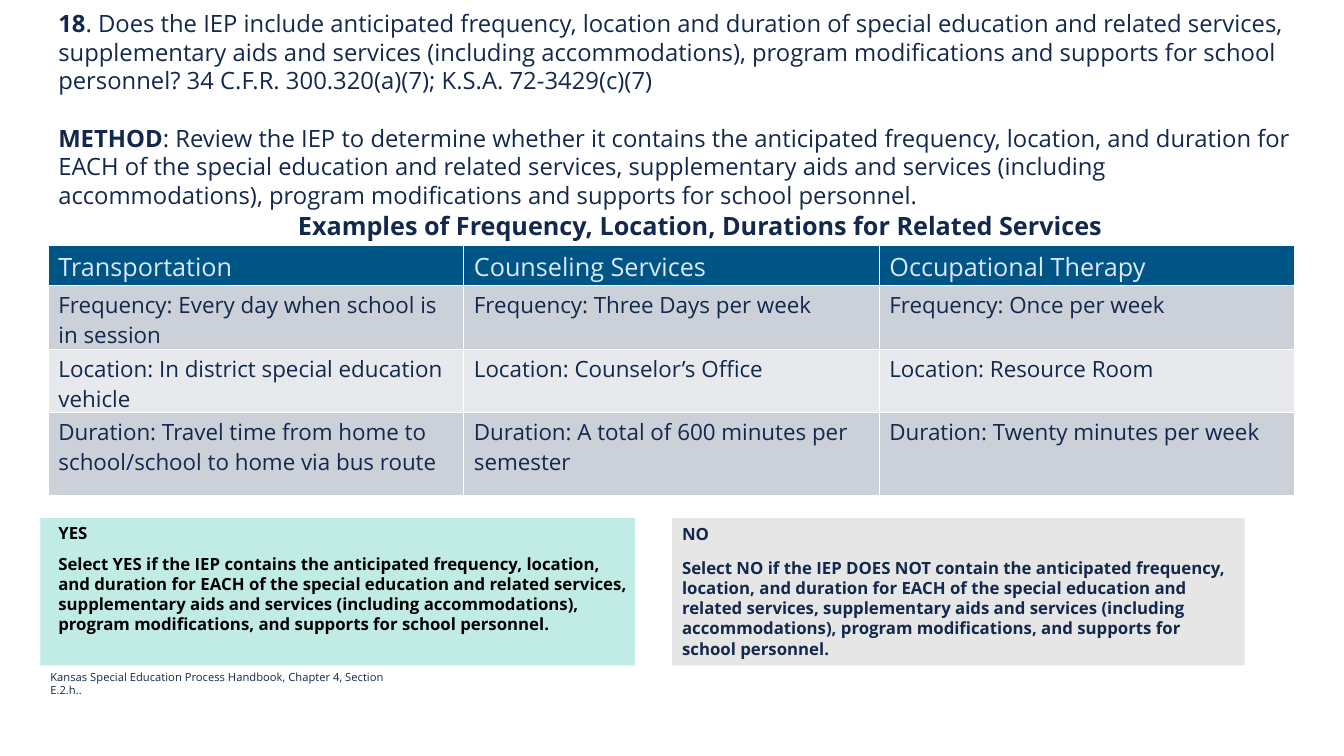
from lxml import etree
from pptx import Presentation
from pptx import util as u
from pptx.dml.color import RGBColor
from pptx.enum import shapes, text
from pptx.oxml.ns import qn

FONT = "Open Sans"
NAVY = "12284C"
ROWS = [
    ("Transportation", "Counseling Services", "Occupational Therapy"),
    ("Frequency: Every day when school is in session",
     "Frequency: Three Days per week", "Frequency: Once per week"),
    ("Location: In district special education vehicle",
     "Location: Counselor’s Office", "Location: Resource Room"),
    ("Duration: Travel time from home to school/school to home via bus route",
     "Duration: A total of 600 minutes per semester",
     "Duration: Twenty minutes per week"),
]
QUESTION = [
    [("18", True),
     (". Does the IEP include anticipated frequency, location and duration of special "
      "education and related services, supplementary aids and services (including "
      "accommodations), program modifications and supports for school personnel? "
      "34 C.F.R. 300.320(a)(7); K.S.A. 72-3429(c)(7)", False)],
    [("METHOD", True),
     (": Review the IEP to determine whether it contains the anticipated frequency, "
      "location, and duration for EACH of the special education and related services, "
      "supplementary aids and services (including accommodations), program "
      "modifications and supports for school personnel.", False)],
]
SERVICES = (" the anticipated frequency, location, and duration for EACH of the special "
            "education and related services, supplementary aids and services (including "
            "accommodations), program modifications, and supports for school personnel.")


def paint(target, color):
    target.fill.solid()
    target.fill.fore_color.rgb = RGBColor.from_string(color)


def apply(target, values):
    for name, value in values.items():
        setattr(target, name, value)


def write(frame, paragraphs, size, color=NAVY, gap=0, indent=0):
    apply(frame, {"word_wrap": True, "vertical_anchor": text.MSO_ANCHOR.TOP})
    for index, spans in enumerate(paragraphs):
        para = frame.paragraphs[0] if index == 0 else frame.add_paragraph()
        apply(para, {"alignment": text.PP_ALIGN.LEFT, "line_spacing": 1.0})
        if index:
            para.space_before = u.Pt(gap)
        if indent:
            para._p.get_or_add_pPr().set("marL", str(u.Cm(indent)))
        for words, bold in spans:
            span = para.add_run()
            span.text = words
            apply(span.font, {"name": FONT, "size": u.Pt(size), "bold": bold})
            span.font.color.rgb = RGBColor.from_string(color)


def add_text(page, place, paragraphs, size, gap=0):
    box = page.shapes.add_textbox(*map(u.Cm, place))
    write(box.text_frame, paragraphs, size, gap=gap)


def add_answer(page, place, fill, answer, advice, color, gap, margins, indent=0):
    box = page.shapes.add_shape(shapes.MSO_SHAPE.RECTANGLE, *map(u.Cm, place))
    box.shadow.inherit = False
    paint(box, fill)
    box.line.fill.background()
    across, down = map(u.Cm, margins)
    apply(box.text_frame, {"margin_left": across, "margin_right": across,
                           "margin_top": down, "margin_bottom": down})
    write(box.text_frame, [[(answer, True)], [(advice + SERVICES, True)]],
          12, color, gap, indent)


def add_borders(cell):
    properties = cell._tc.get_or_add_tcPr()
    for index, side in enumerate(("lnL", "lnR", "lnT", "lnB")):
        line = etree.Element(qn("a:" + side), w=str(u.Pt(1)))
        fill = etree.SubElement(line, qn("a:solidFill"))
        etree.SubElement(fill, qn("a:srgbClr"), val="FFFFFF")
        properties.insert(index, line)


def add_services_table(page):
    heights = (1.02, 1.6, 1.6, 2.08)
    fills = ("005587", "CCD1D9", "E7E9ED", "CCD1D9")
    place = (1.22, 6.18, 31.41, sum(heights))
    table = page.shapes.add_table(len(ROWS), 3, *map(u.Cm, place)).table
    for column in table.columns:
        column.width = u.Cm(10.47)
    for index, words in enumerate(ROWS):
        table.rows[index].height = u.Cm(heights[index])
        size, color = (16, NAVY) if index else (18, "DDE7F7")
        for cell, entry in zip(table.rows[index].cells, words):
            apply(cell, {"margin_top": u.Cm(0.1), "margin_bottom": u.Cm(0),
                         "vertical_anchor": text.MSO_ANCHOR.TOP})
            paint(cell, fills[index])
            add_borders(cell)
            write(cell.text_frame, [[(entry, False)]], size, color)


def main():
    deck = Presentation()
    apply(deck, {"slide_width": u.Cm(33.87), "slide_height": u.Cm(19.05)})
    page = deck.slides.add_slide(deck.slide_layouts[6])
    add_text(page, (1.22, 0.1, 31.98, 5.33), QUESTION, 17, gap=20.5)
    add_text(page, (7.26, 5.18, 22, 1),
             [[("Examples of Frequency, Location, Durations for Related Services", True)]], 18)
    add_services_table(page)
    add_answer(page, (1.02, 13.06, 14.99, 3.71), "C1ECE5", "YES",
               "Select YES if the IEP contains", "000000", 8, (0.18, 0.1), 0.27)
    add_answer(page, (16.94, 13.06, 14.43, 3.71), "E6E6E6", "NO",
               "Select NO if the IEP DOES NOT contain", NAVY, 10, (0.25, 0.13))
    add_text(page, (1.02, 16.76, 9.55, 0.61),
             [[("Kansas Special Education Process Handbook, Chapter 4, Section E.2.h..", False)]], 8)
    deck.save("out.pptx")


if __name__ == "__main__":
    main()
